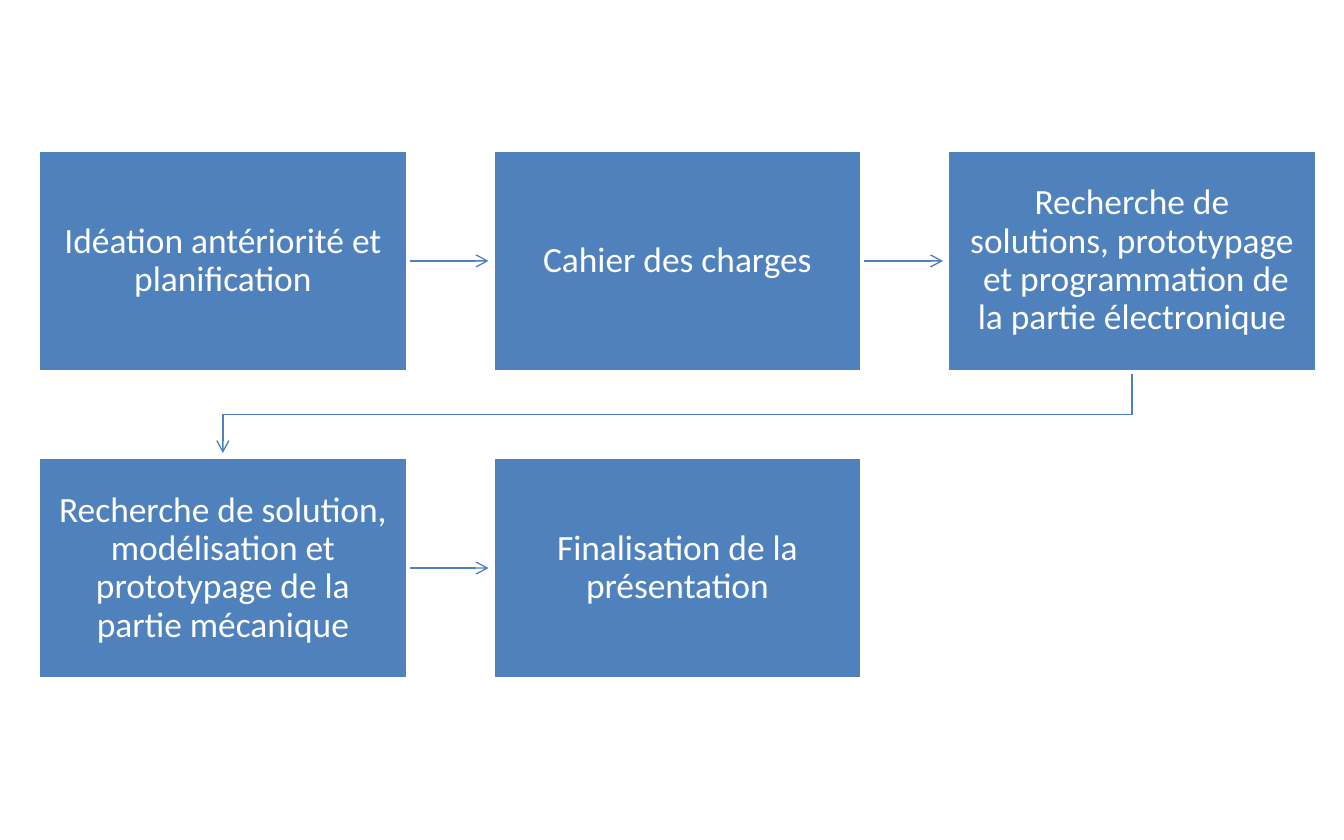
from dataclasses import dataclass
from itertools import pairwise

from lxml.etree import SubElement as Sub
from pptx import Presentation
from pptx.dml.color import RGBColor
from pptx.enum.shapes import MSO_CONNECTOR as Link, MSO_SHAPE as Kind
from pptx.enum.text import MSO_ANCHOR as Anchor, PP_ALIGN as Align
from pptx.oxml.ns import qn
from pptx.shapes.autoshape import Shape
from pptx.shapes.connector import Connector
from pptx.shapes.shapetree import SlideShapes as Shapes
from pptx.util import Pt

BLUE = RGBColor(0x4F, 0x81, 0xBD)
WHITE = RGBColor(0xFF, 0xFF, 0xFF)

LEFT, TOP = 20.4, 80.4
WIDE, HIGH = 198, 118.8
STEP_X, STEP_Y = 243.5, 164.5
GAP = 2.2
INSET = Pt(10.64)

FRAME = {
    "word_wrap": True,
    "vertical_anchor": Anchor.MIDDLE,
    "margin_left": INSET,
    "margin_right": INSET,
    "margin_top": INSET,
    "margin_bottom": INSET,
}
PARA = {"alignment": Align.CENTER, "line_spacing": 0.9}
FONT = {"name": "Calibri", "size": Pt(19)}


@dataclass(frozen=True)
class Step:
    text: str
    row: int
    col: int

    @property
    def x(self) -> float:
        return LEFT + self.col * STEP_X

    @property
    def y(self) -> float:
        return TOP + self.row * STEP_Y


STEPS = [
    Step("Idéation antériorité et planification", 0, 0),
    Step("Cahier des charges", 0, 1),
    Step("Recherche de solutions, prototypage  et programmation de la partie électronique", 0, 2),
    Step("Recherche de solution, modélisation et prototypage de la partie mécanique", 1, 0),
    Step("Finalisation de la présentation", 1, 1),
]


def apply(item: object, style: dict) -> None:
    for key, value in style.items():
        setattr(item, key, value)


def draw_step(shapes: Shapes, step: Step) -> Shape:
    box = shapes.add_shape(Kind.RECTANGLE, Pt(step.x), Pt(step.y), Pt(WIDE), Pt(HIGH))
    box.shadow.inherit = False
    box.fill.solid()
    box.fill.fore_color.rgb = BLUE
    box.line.color.rgb = WHITE
    box.line.width = Pt(2)
    frame = box.text_frame
    frame.text = step.text
    para = frame.paragraphs[0]
    apply(frame, FRAME)
    apply(para, PARA)
    apply(para.font, FONT)
    para.font.color.rgb = WHITE
    return box


def style_arrow(shapes: Shapes, arrow: Shape | Connector) -> None:
    arrow.line.color.rgb = BLUE
    arrow.line.width = Pt(0.75)
    Sub(arrow.line._get_or_add_ln(), qn("a:tailEnd"), type="arrow")
    shapes._spTree.insert(2, arrow._element)


def draw_link(shapes: Shapes, start: Step, end: Step, box: Shape) -> None:
    y = Pt(start.y + HIGH / 2)
    arrow = shapes.add_connector(Link.STRAIGHT, Pt(start.x + WIDE), y, Pt(end.x - GAP), y)
    arrow.begin_connect(box, 3)
    style_arrow(shapes, arrow)
    Sub(arrow._element.spPr, qn("a:effectLst"))


def draw_turn(shapes: Shapes, start: Step, end: Step) -> None:
    right, left = Pt(start.x + WIDE / 2), Pt(end.x + WIDE / 2)
    base = start.y + HIGH
    mid = Pt((base + end.y) / 2)
    pen = shapes.build_freeform(right, Pt(base))
    pen.add_line_segments([(right, mid), (left, mid), (left, Pt(end.y - GAP))], close=False)
    arrow = pen.convert_to_shape()
    arrow.shadow.inherit = False
    arrow.fill.background()
    style_arrow(shapes, arrow)


def main() -> None:
    deck = Presentation()
    deck.slide_width, deck.slide_height = Pt(720), Pt(450)
    shapes = deck.slides.add_slide(deck.slide_layouts[6]).shapes
    boxes = [draw_step(shapes, step) for step in STEPS]
    for (start, end), box in zip(pairwise(STEPS), boxes):
        if start.row == end.row:
            draw_link(shapes, start, end, box)
        else:
            draw_turn(shapes, start, end)
    deck.save("out.pptx")


if __name__ == "__main__":
    main()
